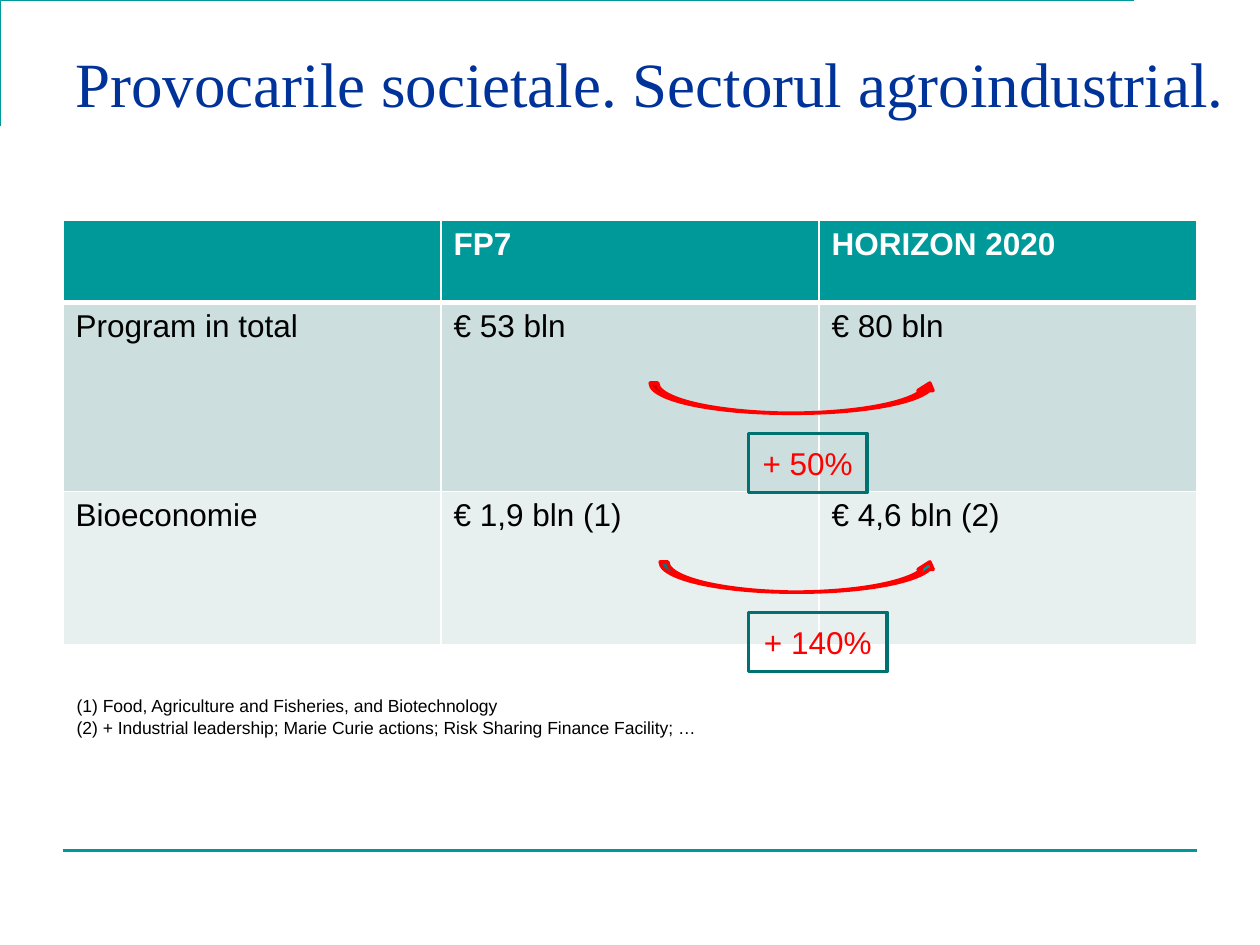
from lxml.etree import SubElement
from pptx import Presentation
from pptx.dml.color import RGBColor
from pptx.enum.shapes import MSO_CONNECTOR, MSO_SHAPE
from pptx.enum.text import MSO_ANCHOR, PP_ALIGN
from pptx.oxml.ns import qn
from pptx.util import Inches, Pt

COLORS = {
    "teal": "009999", "dark_teal": "007171", "band": "CCDEDE", "light_band": "E7EFEF",
    "navy": "003399", "red": "FF0000", "white": "FFFFFF", "black": "000000",
}
TITLE = "Provocarile societale. Sectorul agroindustrial."
ROWS = [
    ("", "FP7", "HORIZON 2020"),
    ("Program in total", "€ 53 bln", "€ 80 bln"),
    ("Bioeconomie", "€ 1,9 bln (1)", "€ 4,6 bln (2)"),
]
ROW_STYLES = [  # height, fill, text colour, bold
    (0.65, "teal", "white", True),
    (1.5, "band", "black", False),
    (1.22, "light_band", "black", False),
]
GROWTH = [  # label, label width, arrow left, arrow top, arrow fill
    ("+ 50%", 0.94, 5.16, 3.04, "red"),
    ("+ 140%", 1.1, 5.24, 4.46, "teal"),
]
ARROW_RIGHT, ARROW_HEIGHT = 7.44, 0.24
LABEL_LEFT, LABEL_DROP, LABEL_HEIGHT = 5.94, 0.4, 0.47
FOOTNOTES = [
    "(1) Food, Agriculture and Fisheries, and Biotechnology",
    "(2) + Industrial leadership; Marie Curie actions; Risk Sharing Finance Facility; …",
]


def rgb(name):
    return RGBColor.from_string(COLORS[name])


def write(frame, lines, color, align=PP_ALIGN.LEFT, **font):
    for index, line in enumerate(lines):
        para = frame.add_paragraph() if index else frame.paragraphs[0]
        para.alignment = align
        span = para.add_run()
        span.text = line
        span.font.color.rgb = rgb(color)
        for key, value in {"name": "Arial", **font}.items():
            setattr(span.font, key, value)


def set_line(shape, color, width):
    shape.line.color.rgb = rgb(color)
    shape.line.width = Pt(width)


def add_text(page, area, lines, color, margins, **font):
    frame = page.shapes.add_textbox(*map(Inches, area)).text_frame
    frame.word_wrap = True
    for side, value in margins.items():
        setattr(frame, f"margin_{side}", Inches(value))
    write(frame, lines, color, **font)


def add_shape(page, kind, area, fill, line):
    shape = page.shapes.add_shape(kind, *map(Inches, area))
    shape.shadow.inherit = False
    if fill:
        shape.fill.solid()
        shape.fill.fore_color.rgb = rgb(fill)
    else:
        shape.fill.background()
    set_line(shape, line, 2)
    return shape


def set_borders(cell, bottom_width):
    """Draw white borders; they must precede the fill in the cell properties."""
    properties = cell._tc.get_or_add_tcPr()
    for side, width in (("L", 1), ("R", 1), ("T", 1), ("B", bottom_width)):
        border = SubElement(properties, qn(f"a:ln{side}"), w=str(Pt(width)))
        fill = SubElement(border, qn("a:solidFill"))
        SubElement(fill, qn("a:srgbClr"), val=COLORS["white"])


def add_frame_lines(page):
    builder = page.shapes.build_freeform(0.42, 0.92, scale=Inches(1))
    builder.add_line_segments([(0.42, 0.25), (9.42, 0.25)], close=False)
    corner = builder.convert_to_shape()
    corner.shadow.inherit = False
    corner.fill.background()
    set_line(corner, "teal", 1.5)
    footer = page.shapes.add_connector(
        MSO_CONNECTOR.STRAIGHT, Inches(0.5), Inches(6.75), Inches(9.5), Inches(6.75))
    SubElement(footer._element.spPr, qn("a:effectLst"))
    set_line(footer, "teal", 1.5)


def add_budget_table(page):
    height = sum(style[0] for style in ROW_STYLES)
    table = page.shapes.add_table(
        len(ROWS), len(ROWS[0]), Inches(0.5), Inches(1.75), Inches(9), Inches(height)).table
    for row, texts, (row_height, fill, color, bold) in zip(table.rows, ROWS, ROW_STYLES):
        row.height = Inches(row_height)
        for cell, text in zip(row.cells, texts):
            set_borders(cell, 3 if bold else 1)
            cell.fill.solid()
            cell.fill.fore_color.rgb = rgb(fill)
            if text:
                write(cell.text_frame, [text], color, size=Pt(18), bold=bold)


def add_growth(page):
    for _, _, left, top, fill in GROWTH:
        area = (left, top, ARROW_RIGHT - left, ARROW_HEIGHT)
        add_shape(page, MSO_SHAPE.CURVED_UP_ARROW, area, fill, "red")
    for text, width, _, top, _ in GROWTH:
        area = (LABEL_LEFT, top + LABEL_DROP, width, LABEL_HEIGHT)
        label = add_shape(page, MSO_SHAPE.RECTANGLE, area, None, "dark_teal")
        label.text_frame.vertical_anchor = MSO_ANCHOR.MIDDLE
        write(label.text_frame, [text], "red", PP_ALIGN.CENTER, size=Pt(18))


def main():
    deck = Presentation()
    deck.slide_width, deck.slide_height = Inches(10), Inches(7.5)
    page = deck.slides.add_slide(deck.slide_layouts[6])
    add_frame_lines(page)
    add_text(page, (0.5, 0.3, 9.5, 1.25), [TITLE], "navy", {"right": 0},
             name="Times New Roman", size=Pt(36))
    add_budget_table(page)
    add_growth(page)
    add_text(page, (0.51, 5.17, 9.21, 0.74), FOOTNOTES, "black", {"top": 0.35}, size=Pt(10))
    deck.save("out.pptx")


if __name__ == "__main__":
    main()
